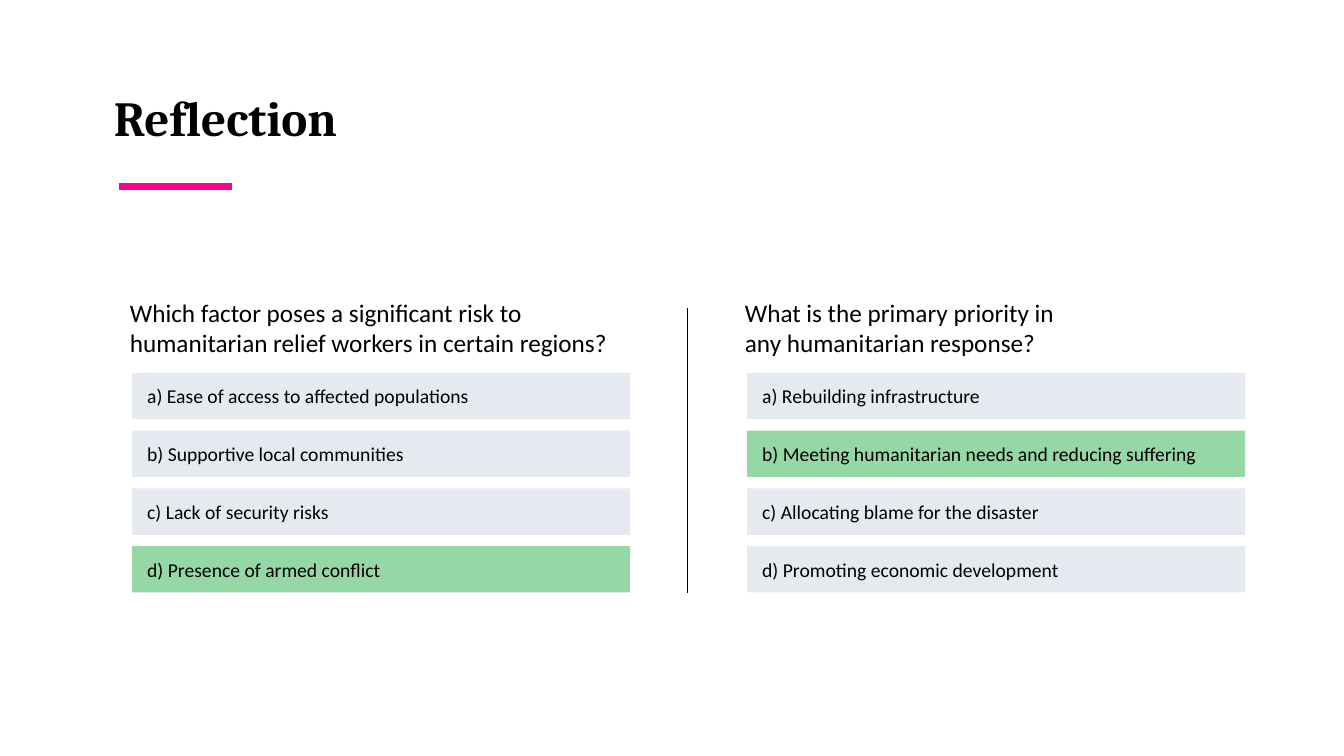
from lxml import etree
from pptx import Presentation
from pptx.dml.color import RGBColor
from pptx.enum import shapes, text
from pptx.oxml.ns import qn
from pptx.util import Inches, Pt

BLACK = RGBColor(0x00, 0x00, 0x00)
PINK = RGBColor(0xFF, 0x00, 0x8A)
GREY = RGBColor(0xE6, 0xE9, 0xF0)
GREEN = RGBColor(0x95, 0xD7, 0xA5)

ANSWER_TOP, ANSWER_PITCH = 0.8, 0.573
ANSWER_WIDTH, ANSWER_HEIGHT = 4.94, 0.46


def write(shape, wording, font_name, size, bold=False):
    frame = shape.text_frame
    frame.word_wrap = True
    frame.text = wording
    para = frame.paragraphs[0]
    para.alignment = text.PP_ALIGN.LEFT
    para.font.name = font_name
    para.font.size = Pt(size)
    para.font.bold = bold
    para.font.color.rgb = BLACK
    return frame


def add_rule(page, start, end, color, weight):
    rule = page.shapes.add_connector(
        shapes.MSO_CONNECTOR.STRAIGHT, *map(Inches, start + end))
    rule.line.color.rgb = color
    rule.line.width = Pt(weight)
    etree.SubElement(rule._element.spPr, qn("a:effectLst"))


def add_heading(page, left, top, width, height, wording):
    title = page.shapes.title
    title.left, title.top = Inches(left), Inches(top)
    title.width, title.height = Inches(width), Inches(height)
    frame = write(title, wording, "Cambria", 35, bold=True)
    frame.auto_size = text.MSO_AUTO_SIZE.NONE
    frame.vertical_anchor = text.MSO_ANCHOR.TOP
    # Accent under the title
    rule_left, rule_top = left + 0.15, top + 1.03
    add_rule(page, (rule_left, rule_top), (rule_left + 1.12, rule_top), PINK, 4.5)


def add_question(page, left, top, question_width, question, answers, correct):
    # Question
    box = page.shapes.add_textbox(
        Inches(left), Inches(top), Inches(question_width), Inches(0.71))
    write(box, question, "Calibri", 18)

    # Answers, with the correct one in green
    for row, (letter, answer) in enumerate(zip("abcd", answers)):
        bar = page.shapes.add_shape(
            shapes.MSO_SHAPE.RECTANGLE,
            Inches(left + 0.12), Inches(top + ANSWER_TOP + row * ANSWER_PITCH),
            Inches(ANSWER_WIDTH), Inches(ANSWER_HEIGHT))
        bar.shadow.inherit = False
        bar.fill.solid()
        bar.fill.fore_color.rgb = GREEN if letter == correct else GREY
        bar.line.fill.background()
        frame = write(bar, f"{letter}) {answer}", "Calibri", 14)
        frame.margin_left = Inches(0.15)
        frame.vertical_anchor = text.MSO_ANCHOR.MIDDLE


def main():
    deck = Presentation()
    deck.slide_width, deck.slide_height = Inches(13.33), Inches(7.5)
    page = deck.slides.add_slide(deck.slide_layouts[5])

    add_heading(page, 1.03, 0.82, 6.67, 0.69, "Reflection")

    # Divider between the two questions
    add_rule(page, (6.82, 3.06), (6.82, 5.88), BLACK, 0.75)

    add_question(
        page, 1.19, 2.9, 4.98,
        "Which factor poses a significant risk to humanitarian relief workers "
        "in certain regions?",
        ["Ease of access to affected populations", "Supportive local communities",
         "Lack of security risks", "Presence of armed conflict"], "d")
    add_question(
        page, 7.29, 2.9, 3.6,
        "What is the primary priority in any humanitarian response?",
        ["Rebuilding infrastructure",
         "Meeting humanitarian needs and reducing suffering",
         "Allocating blame for the disaster", "Promoting economic development"], "b")

    deck.save("out.pptx")


if __name__ == "__main__":
    main()
